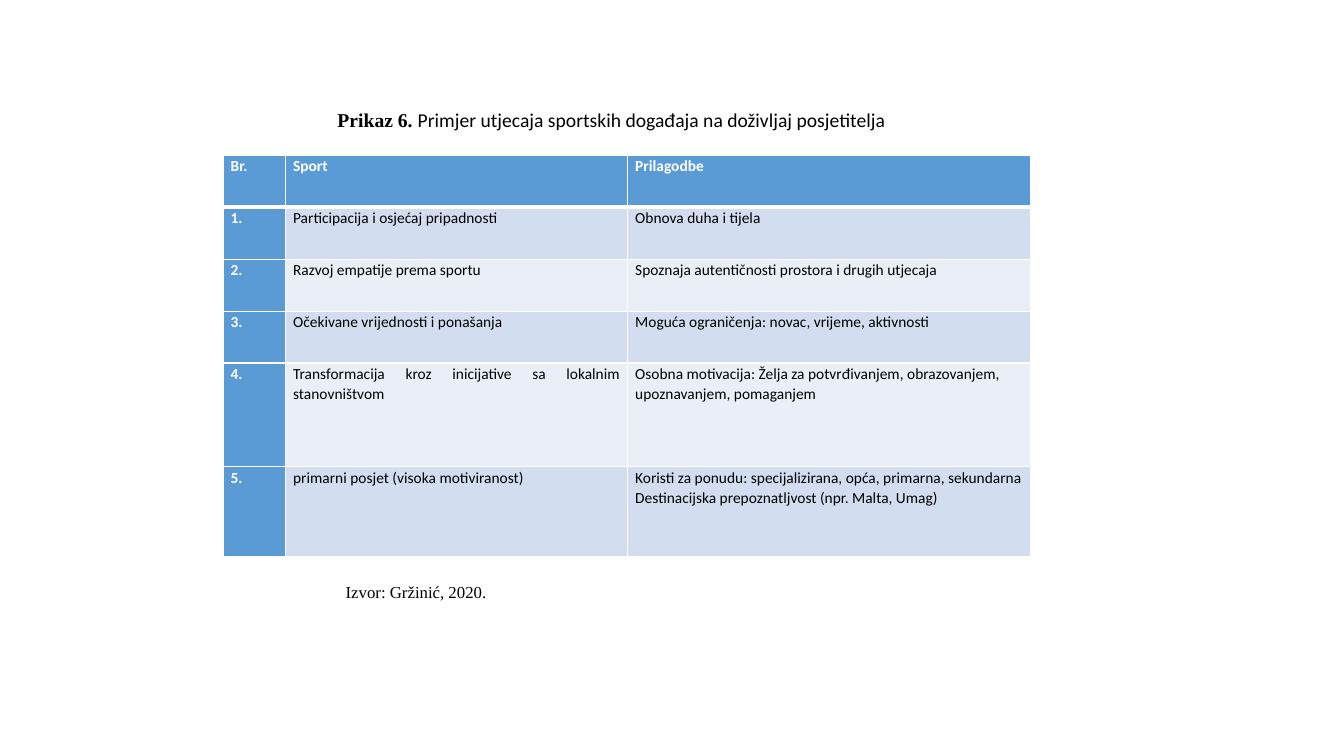
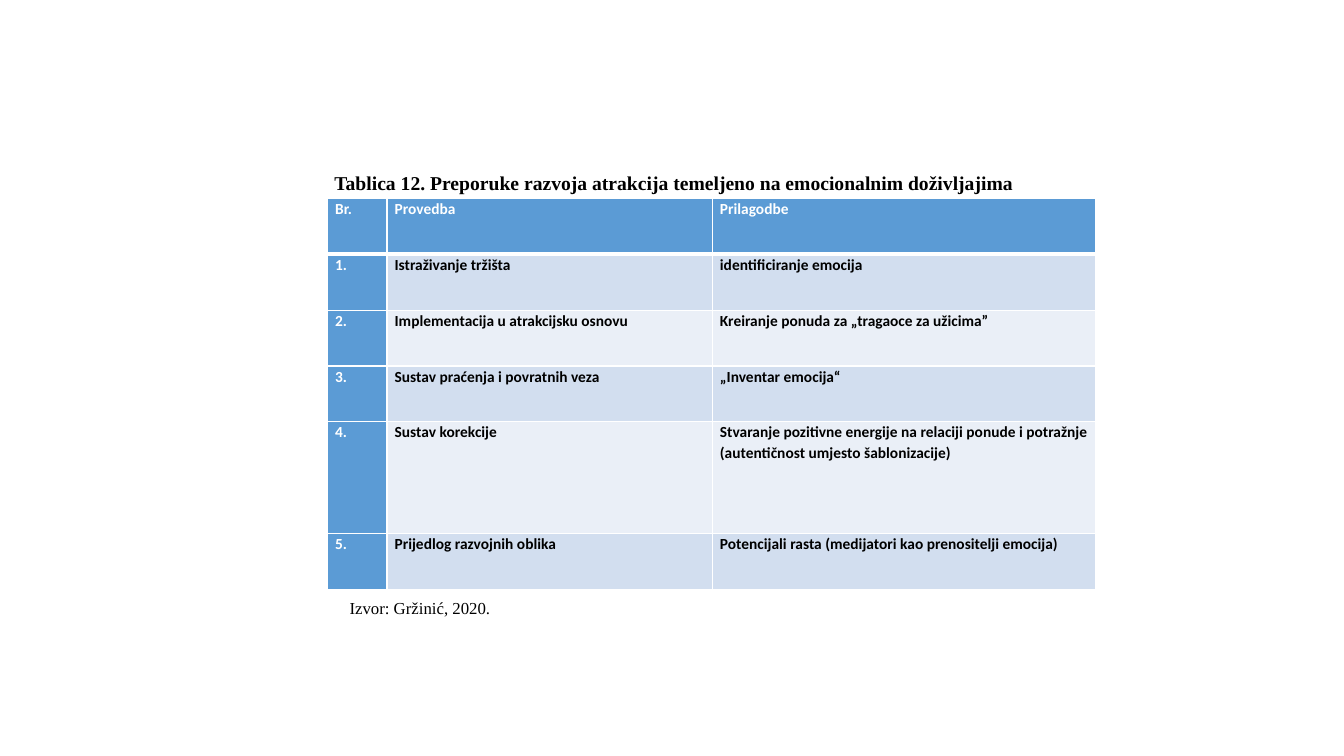
import pptx
import pptx.util
import pptx.dml.color
import pptx.enum.text
import pptx.oxml
import pptx.oxml.ns

Pt = pptx.util.Pt
RGB = pptx.dml.color.RGBColor
ALIGN = pptx.enum.text.PP_ALIGN
FIT = pptx.enum.text.MSO_AUTO_SIZE
ANCHOR = pptx.enum.text.MSO_ANCHOR

BLUE = RGB(0x5B, 0x9B, 0xD5)
PALE = RGB(0xD2, 0xDE, 0xEF)
LIGHT = RGB(0xEA, 0xEF, 0xF7)
WHITE = RGB(0xFF, 0xFF, 0xFF)
BLACK = RGB(0x00, 0x00, 0x00)
SERIF, SANS = "Times New Roman", "Calibri"


def apply(item, form):
    for key, value in form.items():
        setattr(item, key, value)


class Deck:
    """Holds the shared style and the current slide."""

    inset = dict(margin_left=Pt(5.4), margin_right=Pt(5.4),
                 margin_top=0, margin_bottom=0)

    def __init__(self):
        self.show = pptx.Presentation()
        apply(self.show, dict(slide_width=Pt(960), slide_height=Pt(540)))
        self.slide = None

    def page(self):
        self.slide = self.show.slides.add_slide(self.show.slide_layouts[6])

    def words(self, para, text, size, face, color, bold):
        run = para.add_run()
        run.text = text
        apply(run.font, dict(size=Pt(size), name=face, bold=bold))
        run.font.color.rgb = color

    def label(self, left, top, width, height, size, runs, align, anchor):
        box = self.slide.shapes.add_textbox(
            Pt(left), Pt(top), Pt(width), Pt(height))
        frame = box.text_frame
        apply(frame, dict(word_wrap=False, auto_size=FIT.SHAPE_TO_FIT_TEXT,
                          vertical_anchor=anchor))
        para = frame.paragraphs[0]
        para.alignment = align
        for text, face, bold in runs:
            self.words(para, text, size, face, BLACK, bold)

    def title(self, left, top, width, runs):
        self.label(left, top, width, 24.4, 14, runs,
                   ALIGN.JUSTIFY, ANCHOR.MIDDLE)

    def credit(self, left, top, text):
        self.label(left, top, 116.6, 21.8, 12, [(text, SERIF, False)],
                   ALIGN.LEFT, ANCHOR.TOP)

    def border(self, cell, row):
        # The rule under the header is thicker than the others
        wide = {"T": 3 if row == 1 else 1, "B": 3 if row == 0 else 1}
        props = cell._tc.get_or_add_tcPr()
        for side in "LRTB":
            props.append(pptx.oxml.parse_xml(
                f'<a:ln{side} {pptx.oxml.ns.nsdecls("a")} '
                f'w="{Pt(wide.get(side, 1))}"><a:solidFill>'
                f'<a:srgbClr val="{WHITE}"/></a:solidFill></a:ln{side}>'))

    def cell(self, cell, text, row, col, bold, align):
        head = row == 0 or col == 0
        apply(cell, self.inset)
        self.border(cell, row)
        cell.fill.solid()
        cell.fill.fore_color.rgb = BLUE if head else (LIGHT, PALE)[row % 2]
        frame = cell.text_frame
        for n, line in enumerate(text.split("\n")):
            para = frame.add_paragraph() if n else frame.paragraphs[0]
            apply(para, dict(alignment=align, line_spacing=1.07))
            self.words(para, line, 11, SANS, WHITE if head else BLACK,
                       head or bold)

    def table(self, left, top, cols, rows, data, bold, ragged):
        grid = self.slide.shapes.add_table(
            len(rows), len(cols), Pt(left), Pt(top),
            Pt(sum(cols)), Pt(sum(rows))).table
        for part, width in zip(grid.columns, cols):
            part.width = Pt(width)
        for part, height in zip(grid.rows, rows):
            part.height = Pt(height)
        for r, line in enumerate(data):
            number = f"{r}." if r else "Br."
            for c, text in enumerate((number, *line)):
                align = ALIGN.LEFT if (r, c) == ragged else ALIGN.JUSTIFY
                self.cell(grid.cell(r, c), text, r, c, bold, align)


SOURCE = "Izvor: Gržinić, 2020."

SPORT = [
    ("Sport", "Prilagodbe"),
    ("Participacija i osjećaj pripadnosti", "Obnova duha i tijela"),
    ("Razvoj empatije prema sportu",
     "Spoznaja autentičnosti prostora i drugih utjecaja"),
    ("Očekivane vrijednosti i ponašanja",
     "Moguća ograničenja: novac, vrijeme, aktivnosti"),
    ("Transformacija kroz inicijative sa lokalnim stanovništvom",
     "Osobna motivacija: Želja za potvrđivanjem, obrazovanjem, "
     "upoznavanjem, pomaganjem"),
    ("primarni posjet (visoka motiviranost)",
     "Koristi za ponudu: specijalizirana, opća, primarna, sekundarna\n"
     "Destinacijska prepoznatljvost (npr. Malta, Umag)"),
]

ADVICE = [
    ("Provedba", "Prilagodbe"),
    ("Istraživanje tržišta", "identificiranje emocija"),
    ("Implementacija u atrakcijsku osnovu",
     "Kreiranje ponuda za „tragaoce za užicima”"),
    ("Sustav praćenja i povratnih veza", "„Inventar emocija“"),
    ("Sustav korekcije",
     "Stvaranje pozitivne energije na relaciji ponude i potražnje "
     "(autentičnost umjesto šablonizacije)"),
    ("Prijedlog razvojnih oblika",
     "Potencijali rasta (medijatori kao prenositelji emocija)"),
]


def main():
    deck = Deck()

    # Slide 1: sports events
    deck.page()
    deck.table(159.4, 111, (44.6, 244.4, 288), [37.1] * 4 + [74.2, 64.2],
               SPORT, bold=False, ragged=(4, 2))
    deck.title(234, 73.5, 407.5, [
        ("Prikaz 6. ", SERIF, True),
        ("Primjer utjecaja sportskih događaja na doživljaj posjetitelja",
         SANS, False)])
    deck.credit(239.8, 411.8, SOURCE)

    # Slide 2: advice on attractions
    deck.page()
    deck.table(234, 141.8, (42.5, 232.4, 274), [39.9] * 4 + [79.8, 39.9],
               ADVICE, bold=True, ragged=(4, 2))
    deck.title(231.8, 118, 506.2, [
        ("Tablica 12. Preporuke razvoja atrakcija temeljeno na "
         "emocionalnim doživljajima", SERIF, True)])
    deck.credit(242.6, 423.4, SOURCE)

    deck.show.save("out.pptx")


if __name__ == "__main__":
    main()
